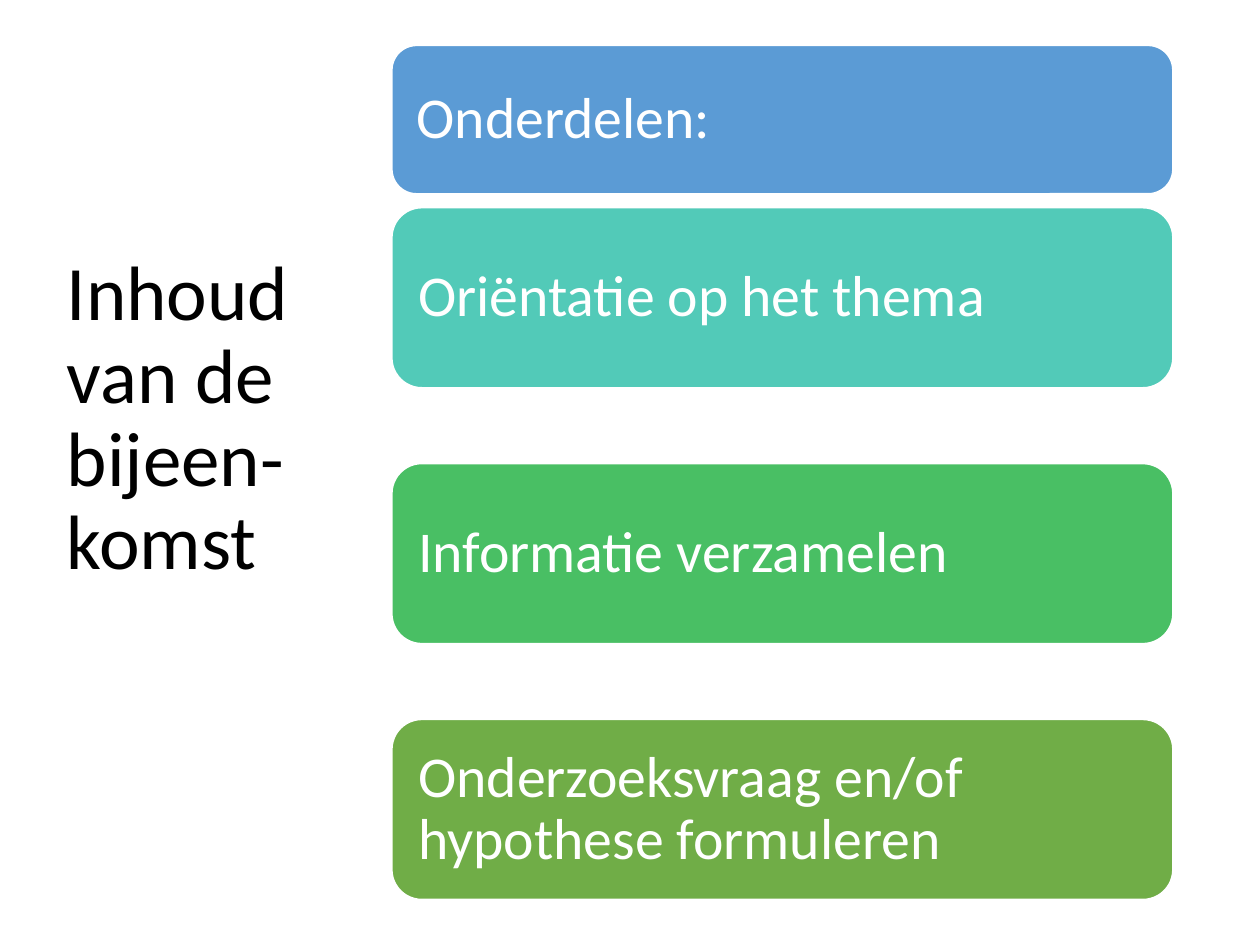
from pptx import Presentation
from pptx.dml.color import RGBColor
from pptx.enum.shapes import MSO_SHAPE
from pptx.enum.text import MSO_ANCHOR, MSO_AUTO_SIZE, PP_ALIGN
from pptx.util import Inches, Pt

ROUNDED = MSO_SHAPE.ROUNDED_RECTANGLE
MIDDLE = MSO_ANCHOR.MIDDLE
NO_FIT = MSO_AUTO_SIZE.NONE
LEFT = PP_ALIGN.LEFT

TITLE_ONLY = 5
FONT = "Calibri"
BLACK = RGBColor(0x00, 0x00, 0x00)
WHITE = RGBColor(0xFF, 0xFF, 0xFF)
BLUE = RGBColor(0x5B, 0x9B, 0xD5)
TEAL = RGBColor(0x52, 0xCA, 0xB8)
GREEN = RGBColor(0x49, 0xBF, 0x64)
OLIVE = RGBColor(0x70, 0xAD, 0x47)

HEADING = ("Onderdelen:", BLUE)
PARTS = [
    ("Oriëntatie op het thema", TEAL),
    ("Informatie verzamelen", GREEN),
    ("Onderzoeksvraag en/of hypothese formuleren", OLIVE),
]


def write_text(shape, text, size, color, inset):
    """Fill a shape with one left-aligned, vertically centred paragraph."""
    frame = shape.text_frame
    frame.word_wrap = True
    frame.auto_size = NO_FIT
    frame.vertical_anchor = MIDDLE
    frame.margin_left = frame.margin_right = Inches(inset[0])
    frame.margin_top = frame.margin_bottom = Inches(inset[1])
    para = frame.paragraphs[0]
    para.alignment = LEFT
    para.line_spacing = 0.9
    span = para.add_run()
    span.text = text
    span.font.name = FONT
    span.font.size = Pt(size)
    span.font.color.rgb = color


def place_title(page, left, top, width, height):
    """Move the title placeholder to the given box and write the title."""
    title = page.shapes.title
    title.left, title.top = Inches(left), Inches(top)
    title.width, title.height = Inches(width), Inches(height)
    write_text(title, "Inhoud van de bijeen-komst", size=44, color=BLACK, inset=(0.1, 0.05))


def add_bar(page, left, top, width, height, text, color):
    """Add one coloured rounded bar with its label."""
    bar = page.shapes.add_shape(
        ROUNDED, Inches(left), Inches(top), Inches(width), Inches(height)
    )
    bar.shadow.inherit = False
    bar.fill.solid()
    bar.fill.fore_color.rgb = color
    bar.line.color.rgb = WHITE
    bar.line.width = Pt(1)
    write_text(bar, text, size=33, color=WHITE, inset=(0.14, 0.14))


def add_agenda(page, left, top, width, height):
    """Stack the heading bar and the evenly spaced part bars in the given box."""
    heading_height = 0.174 * height
    bar_height = 0.211 * height
    first_top = top + 0.19 * height
    step = (top + height - bar_height - first_top) / (len(PARTS) - 1)
    add_bar(page, left, top, width, heading_height, *HEADING)
    for row, part in enumerate(PARTS):
        add_bar(page, left, first_top + row * step, width, bar_height, *part)


def main():
    """Build and save the deck."""
    deck = Presentation()
    deck.slide_width, deck.slide_height = Inches(10), Inches(7.5)
    page = deck.slides.add_slide(deck.slide_layouts[TITLE_ONLY])
    add_agenda(page, left=3.11, top=0.36, width=6.2, height=6.78)
    place_title(page, left=0.43, top=0.4, width=2.05, height=5.87)
    deck.save("out.pptx")


if __name__ == "__main__":
    main()
